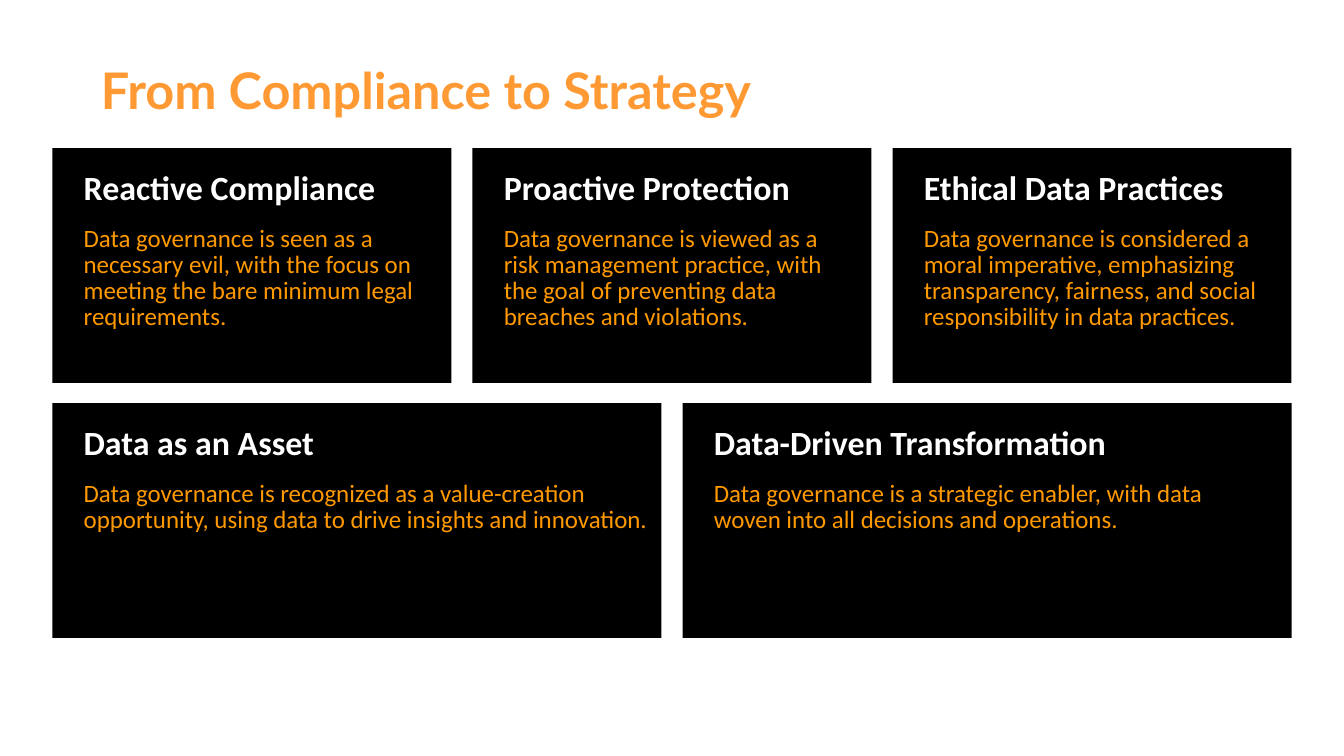
"""Build the slide on moving data governance from compliance to strategy."""
from pptx import Presentation
from pptx.dml.color import RGBColor
from pptx.enum.shapes import MSO_SHAPE
from pptx.enum.text import MSO_ANCHOR
from pptx.util import Inches, Pt

RECT = MSO_SHAPE.RECTANGLE
TOP, BOTTOM = MSO_ANCHOR.TOP, MSO_ANCHOR.BOTTOM

THEME = {
    "card": RGBColor.from_string("000000"),
    "title": {"font": {"name": "Lato", "size": Pt(36), "bold": True},
              "color": RGBColor.from_string("FF9933"), "space": 1.1, "anchor": BOTTOM},
    "head": {"font": {"name": "Calibri", "size": Pt(24.2), "bold": True},
             "color": RGBColor.from_string("FFFFFF"), "space": Pt(25.2), "anchor": TOP},
    "body": {"font": {"name": "Calibri", "size": Pt(17.8), "bold": False},
             "color": RGBColor.from_string("FF9900"), "space": Pt(18.5), "anchor": TOP},
}

LEFT, UPPER, SPAN = 0.52, 1.47, 12.29
TALL, GAP, ROW_GAP = 2.33, 0.21, 0.2
PAD, HEAD_DROP, BODY_DROP = 0.31, 0.24, 0.78

ROWS = [
    (3.78, [
        ("Reactive Compliance", 3.78, 1.03,
         "Data governance is seen as a necessary evil, with the focus on "
         "meeting the bare minimum legal requirements."),
        ("Proactive Protection", 3.31, 1.03,
         "Data governance is viewed as a risk management practice, with "
         "the goal of preventing data breaches and violations."),
        ("Ethical Data Practices", 3.42, 1.03,
         "Data governance is considered a moral imperative, emphasizing "
         "transparency, fairness, and social responsibility in data practices."),
    ]),
    (6.07, [
        ("Data as an Asset", 6.07, 0.77,
         "Data governance is recognized as a value-creation opportunity, "
         "using data to drive insights and innovation."),
        ("Data-Driven Transformation", 5.42, 0.51,
         "Data governance is a strategic enabler, with data woven into "
         "all decisions and operations."),
    ]),
]

deck = Presentation()
deck.slide_width, deck.slide_height = Inches(13.33), Inches(7.5)
slide = deck.slides.add_slide(deck.slide_layouts[6])


def write(text, style, x, y, wide, high):
    box = slide.shapes.add_textbox(Inches(x), Inches(y), Inches(wide), Inches(high))
    frame = box.text_frame
    frame.word_wrap = True
    frame.vertical_anchor = style["anchor"]
    for side in ("left", "top", "right", "bottom"):
        setattr(frame, f"margin_{side}", 0)
    line = frame.paragraphs[0]
    line.line_spacing = style["space"]
    run = line.add_run()
    run.text = text
    for key, value in style["font"].items():
        setattr(run.font, key, value)
    run.font.color.rgb = style["color"]


write("From Compliance to Strategy", THEME["title"], 1, 0.54, 11.15, 0.65)

for row, (head_wide, cards) in enumerate(ROWS):
    y = UPPER + row * (TALL + ROW_GAP)
    wide = (SPAN - GAP * (len(cards) - 1)) / len(cards)
    for col, (head, body_wide, body_high, body) in enumerate(cards):
        x = LEFT + col * (wide + GAP)
        card = slide.shapes.add_shape(RECT, Inches(x), Inches(y), Inches(wide), Inches(TALL))
        card.shadow.inherit = False
        card.fill.solid()
        card.fill.fore_color.rgb = THEME["card"]
        card.line.fill.background()
        write(head, THEME["head"], x + PAD, y + HEAD_DROP, head_wide, 0.35)
        write(body, THEME["body"], x + PAD, y + BODY_DROP, body_wide, body_high)

deck.save("out.pptx")
